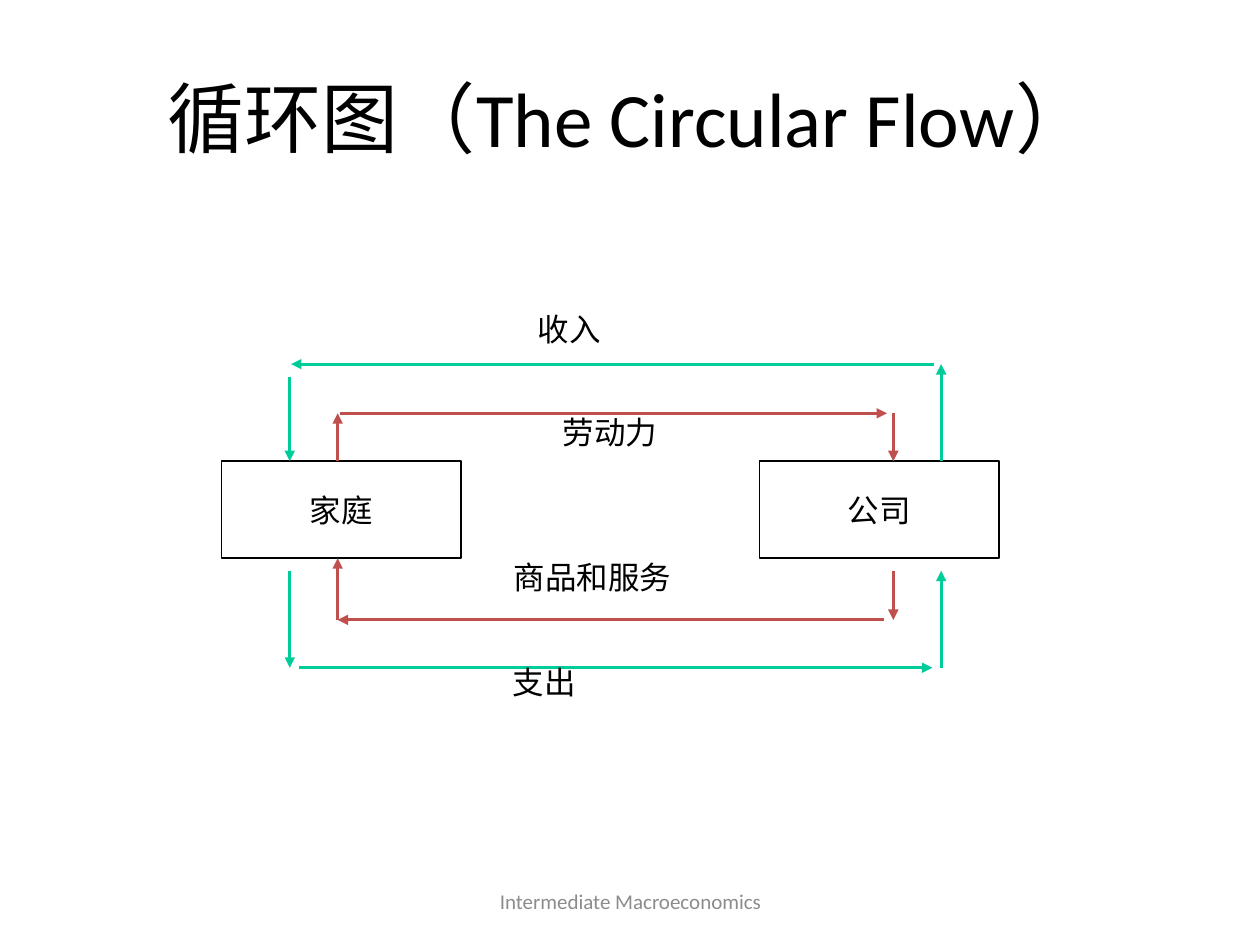
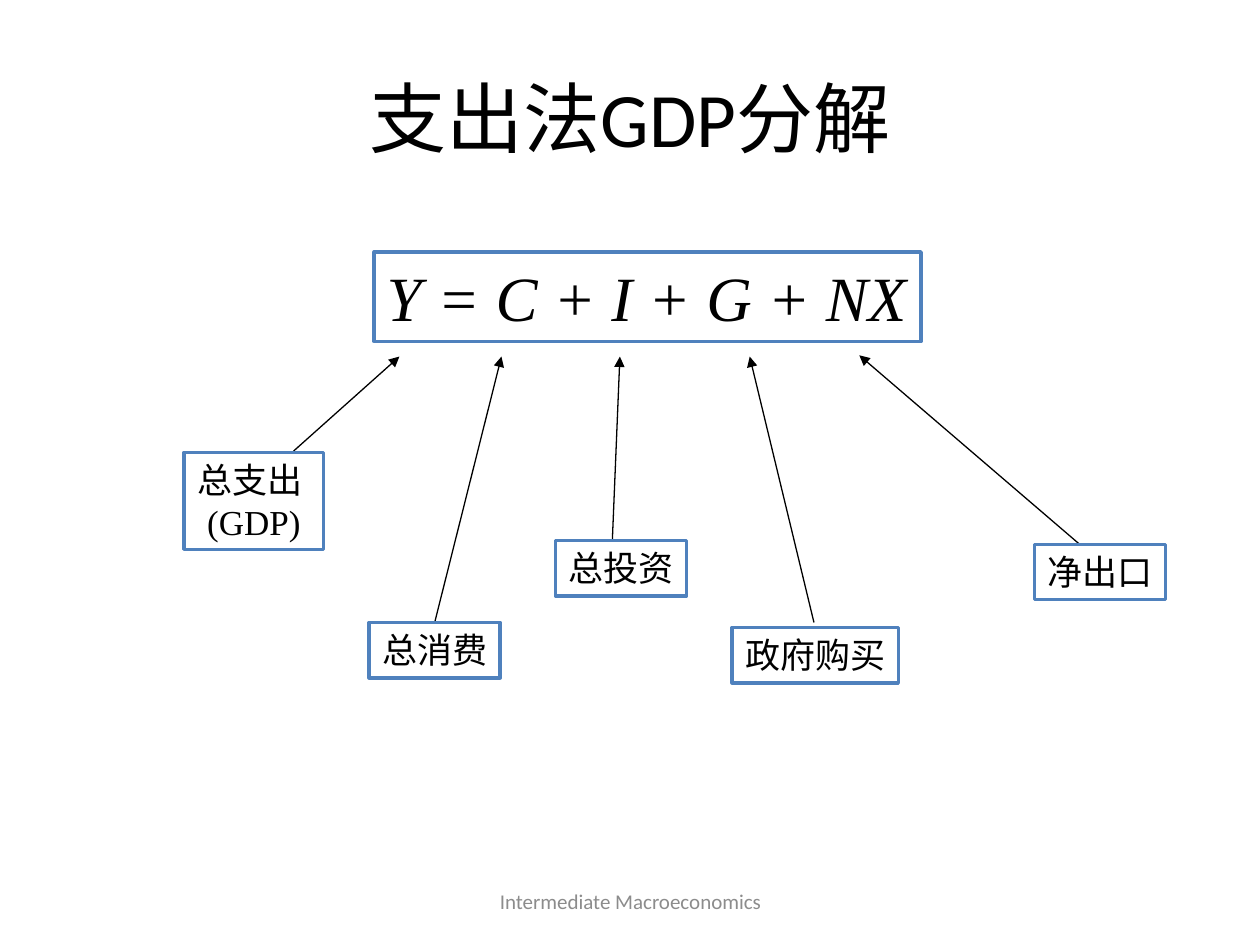
from lxml import etree
from pptx import Presentation
from pptx.dml.color import RGBColor
from pptx.enum.shapes import MSO_CONNECTOR, MSO_SHAPE
from pptx.enum.text import MSO_ANCHOR, MSO_AUTO_SIZE, PP_ALIGN
from pptx.oxml.ns import qn
from pptx.util import Pt

EMU_PER_PX = 9144  # 100 px to the inch
STRAIGHT = MSO_CONNECTOR.STRAIGHT
RECTANGLE = MSO_SHAPE.RECTANGLE
LEFT, CENTER = PP_ALIGN.LEFT, PP_ALIGN.CENTER
TOP, MIDDLE = MSO_ANCHOR.TOP, MSO_ANCHOR.MIDDLE
FIT, FIXED = MSO_AUTO_SIZE.SHAPE_TO_FIT_TEXT, MSO_AUTO_SIZE.NONE
TOP_SIDE = 0

COLORS = {
    "text": "000000",
    "paper": "FFFFFF",
    "footer": "8C8C8C",
    "money": "00CC99",
    "goods": "C0504D",
    "frame": "4F81BD",
}
SANS, SERIF = "Calibri", "Times New Roman"
FOOTER = "Intermediate Macroeconomics"


def px(length):
    return length * EMU_PER_PX


def color(name):
    return RGBColor.from_string(COLORS[name])


class Deck:
    """Holds the shared style and the slide being built."""

    title_font = {"name": SANS, "size": Pt(44)}
    footer_font = {"name": SANS, "size": Pt(12)}
    label_font = {"name": SERIF, "size": Pt(18)}
    term_font = {"name": SERIF, "size": Pt(20)}
    formula_font = {"name": SERIF, "size": Pt(36), "italic": True}

    def __init__(self):
        self.presentation = Presentation()
        self.presentation.slide_width = px(1000)
        self.presentation.slide_height = px(750)
        self.slide = None

    def add_slide(self, title):
        layout = self.presentation.slide_layouts.get_by_name("Title Only")
        self.slide = self.presentation.slides.add_slide(layout)
        placeholder = self.slide.shapes.title
        self.place(placeholder, 50, 30, 900, 125)
        self.format_text(placeholder, title, self.title_font, anchor=MIDDLE)
        self.label(FOOTER, 342, 695, 317, 40, self.footer_font, ink="footer",
                   align=CENTER, anchor=MIDDLE, wrap=True, size=FIXED)

    def place(self, shape, left, top, width, height):
        bounds = {"left": left, "top": top, "width": width, "height": height}
        for name, value in bounds.items():
            setattr(shape, name, px(value))

    def format_text(self, shape, text, font, ink="text", align=CENTER, anchor=TOP,
                    wrap=True, size=FIXED):
        frame = shape.text_frame
        frame.text = text
        settings = {"word_wrap": wrap, "auto_size": size, "vertical_anchor": anchor}
        for name, value in settings.items():
            setattr(frame, name, value)
        for paragraph in frame.paragraphs:
            paragraph.alignment = align
            for run in paragraph.runs:
                for name, value in font.items():
                    setattr(run.font, name, value)
                run.font.color.rgb = color(ink)

    def label(self, text, left, top, width, height, font, ink="text",
              align=LEFT, anchor=TOP, wrap=False, size=FIT):
        box = self.slide.shapes.add_textbox(px(left), px(top), px(width), px(height))
        self.format_text(box, text, font, ink, align, anchor, wrap, size)

    def box(self, text, left, top, width, height, font, line="frame", weight=2,
            align=CENTER, anchor=TOP, size=FIT):
        box = self.slide.shapes.add_shape(
            RECTANGLE, px(left), px(top), px(width), px(height))
        box.shadow.inherit = False
        box.fill.solid()
        box.fill.fore_color.rgb = color("paper")
        box.line.color.rgb = color(line)
        box.line.width = Pt(weight)
        self.format_text(box, text, font, align=align, anchor=anchor, wrap=False,
                         size=size)
        return box

    def arrow(self, start, end, line="text", weight=0.75):
        points = [px(length) for length in (*start, *end)]
        arrow = self.slide.shapes.add_connector(STRAIGHT, *points)
        arrow.line.color.rgb = color(line)
        arrow.line.width = Pt(weight)
        properties = arrow.element.spPr
        etree.SubElement(properties.find(qn("a:ln")), qn("a:tailEnd"), type="triangle")
        etree.SubElement(properties, qn("a:effectLst"))
        return arrow


def build_circular_flow(deck):
    deck.add_slide("循环图（The Circular Flow）")

    # Households and firms
    box_top, box_height = 366, 77
    box_bottom = box_top + box_height
    for name, left in (("家庭", 176), ("公司", 603)):
        deck.box(name, left, box_top, 190, box_height, deck.label_font,
                 line="text", weight=0.75, anchor=MIDDLE, size=FIXED)

    # Outer loop of money and inner loop of labour and goods
    below = box_bottom + 10
    outer_left, outer_right, outer_top, outer_bottom = 230, 747, 289, 530
    inner_left, inner_right, inner_top, inner_bottom = 268, 709, 328, 492
    loops = {
        "money": [
            ((outer_right, box_top), (outer_right, outer_top)),
            ((741, outer_top), (231, outer_top)),
            ((outer_left, outer_top + 10), (outer_left, box_top)),
            ((outer_left, below), (outer_left, outer_bottom)),
            ((237, outer_bottom), (740, outer_bottom)),
            ((outer_right, outer_bottom), (outer_right, below)),
        ],
        "goods": [
            ((inner_left, box_top), (inner_left, inner_top)),
            ((270, inner_top), (704, inner_top)),
            ((inner_right, inner_top), (inner_right, box_top)),
            ((inner_right, below), (inner_right, inner_bottom)),
            ((702, inner_bottom), (inner_left, inner_bottom)),
            ((inner_left, inner_bottom), (inner_left, box_bottom)),
        ],
    }
    for line, arrows in loops.items():
        for start, end in arrows:
            deck.arrow(start, end, line, 1.75)

    # Names of the flows
    flows = (("收入", 417, 241), ("劳动力", 437, 323),
             ("商品和服务", 398, 438), ("支出", 397, 521))
    for name, left, top in flows:
        width = 21 + 25 * len(name)
        deck.label(name, left, top, width, 40, deck.label_font)


def build_expenditure_parts(deck):
    deck.add_slide("支出法GDP分解")
    deck.box("Y = C + I + G + NX", 297, 200, 434, 71, deck.formula_font, align=LEFT)

    # Term, its box, arrow from the box to the formula, whether they join
    terms = (
        ("总支出 \n(GDP)", (146, 359, 111, 77), (233, 358), (317, 283), False),
        ("总消费", (293, 494, 104, 44), (345, 494), (398, 283), True),
        ("总投资", (441, 429, 104, 44), (486, 429), (492, 283), False),
        ("政府购买", (581, 498, 132, 44), (646, 494), (595, 283), False),
        ("净出口", (821, 432, 104, 44), (865, 439), (682, 282), False),
    )
    for name, bounds, start, end, joined in terms:
        arrow = deck.arrow(start, end)
        box = deck.box(name, *bounds, deck.term_font)
        if joined:
            arrow.begin_connect(box, TOP_SIDE)


def main():
    deck = Deck()
    build_circular_flow(deck)
    build_expenditure_parts(deck)
    deck.presentation.save("out.pptx")


if __name__ == "__main__":
    main()
